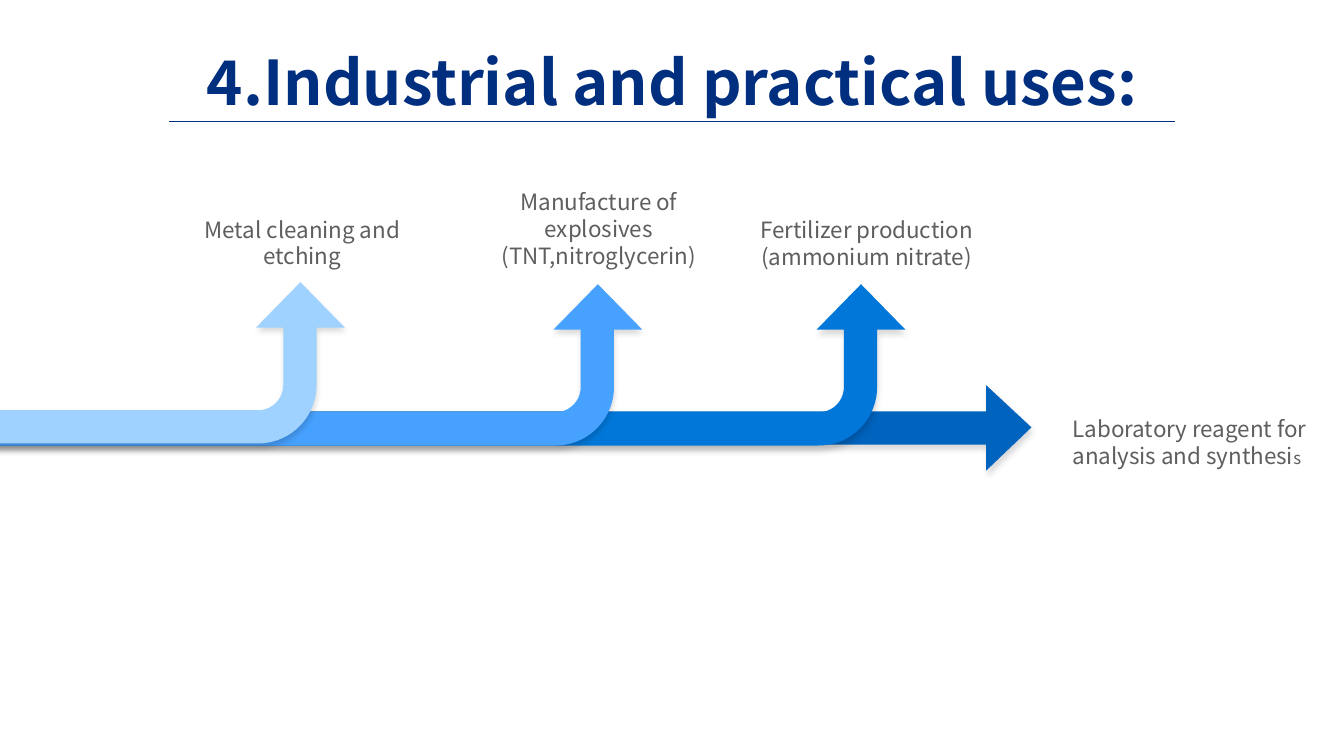
"""Build a slide of branching arrows for industrial and practical uses."""
from math import cos, radians, sin

from lxml.etree import SubElement
from pptx import Presentation
from pptx.dml.color import RGBColor
from pptx.enum.shapes import MSO_CONNECTOR
from pptx.enum.text import MSO_ANCHOR, PP_ALIGN
from pptx.oxml.ns import qn
from pptx.util import Inches, Pt

FONT = "Noto Sans CJK SC"
NAVY = RGBColor(0x00, 0x2F, 0x7F)
GRAY = RGBColor(0x5E, 0x5E, 0x5E)
DEEP_BLUE = RGBColor(0x00, 0x63, 0xBE)
STRONG_BLUE = RGBColor(0x01, 0x78, 0xD9)
BRIGHT_BLUE = RGBColor(0x47, 0xA1, 0xFE)
PALE_BLUE = RGBColor(0x9F, 0xD2, 0xFF)


def add_arrow(page, points, color):
    corners = [(Inches(x), Inches(y)) for x, y in points]
    builder = page.shapes.build_freeform(*corners[0])
    builder.add_line_segments(corners[1:], close=True)
    arrow = builder.convert_to_shape()
    arrow.fill.solid()
    arrow.fill.fore_color.rgb = color
    arrow.line.fill.background()
    arrow.shadow.inherit = False
    effects = arrow._element.spPr.find(qn("a:effectLst"))
    shadow = SubElement(effects, qn("a:outerShdw"), blurRad=str(Pt(4)), dist=str(Pt(3)),
                        dir="5400000", algn="t", rotWithShape="0")
    black = SubElement(shadow, qn("a:srgbClr"), val="000000")
    SubElement(black, qn("a:alpha"), val="15000")


def format_span(span, size, color):
    span.font.name = FONT
    span.font.size = Pt(size)
    span.font.color.rgb = color


deck = Presentation()
deck.slide_width = Inches(13.33)
deck.slide_height = Inches(7.5)
page = deck.slides.add_slide(deck.slide_layouts[5])

rule = page.shapes.add_connector(MSO_CONNECTOR.STRAIGHT, Inches(1.68), Inches(1.2),
                                 Inches(11.65), Inches(1.2))
rule.line.color.rgb = NAVY
rule.line.width = Pt(0.5)
SubElement(rule._element.spPr, qn("a:effectLst"))

title = page.shapes.title
title.left, title.top = Inches(0.92), Inches(0.12)
title.width, title.height = Inches(11.5), Inches(1.45)
title.text_frame.text = "4.Industrial and practical uses:"
title.text_frame.vertical_anchor = MSO_ANCHOR.MIDDLE
heading = title.text_frame.paragraphs[0]
heading.alignment = PP_ALIGN.CENTER
heading.line_spacing = 0.9
format_span(heading.runs[0], 44, NAVY)
heading.runs[0].font.bold = True

add_arrow(page, [(10.23, 4.24), (9.78, 3.82), (9.78, 4.08), (-0.55, 4.08),
                 (-0.59, 4.41), (9.78, 4.41), (9.78, 4.67)], DEEP_BLUE)

branches = [
    (8.54, 2.82, -0.49, STRONG_BLUE),
    (5.93, 2.82, -0.54, BRIGHT_BLUE),
    (2.98, 2.8, -1.68, PALE_BLUE),
]
for tip, top, start, color in branches:
    bend_x, bend_y = tip - 0.42, top + 1.02
    inner, outer = [
        [(bend_x + radius * cos(radians(angle)), bend_y + radius * sin(radians(angle)))
         for angle in range(0, 91, 5)]
        for radius in (0.25, 0.58)
    ]
    head = top + 0.45
    points = [(tip, top), (tip - 0.44, head), (tip - 0.17, head), *inner,
              (start, top + 1.27), (start, top + 1.6), *reversed(outer),
              (tip + 0.16, head), (tip + 0.44, head)]
    add_arrow(page, points, color)

labels = [
    (10.54, 4.07, 2.65, 0.63, PP_ALIGN.LEFT,
     [["Laboratory reagent for"], ["analysis and synthesi", "s"]]),
    (7.07, 2.1, 3.05, 0.63, PP_ALIGN.CENTER,
     [["Fertilizer production"], ["(ammonium nitrate)"]]),
    (4.81, 1.82, 2.26, 0.89, PP_ALIGN.CENTER,
     [["Manufacture of explosives"], ["(TNT,nitroglycerin)"]]),
    (1.87, 2.09, 2.26, 0.89, PP_ALIGN.CENTER,
     [["Metal cleaning and etching"]]),
]
for left, top, width, height, alignment, lines in labels:
    box = page.shapes.add_textbox(Inches(left), Inches(top), Inches(width), Inches(height))
    frame = box.text_frame
    frame.word_wrap = True
    for index, texts in enumerate(lines):
        para = frame.add_paragraph() if index else frame.paragraphs[0]
        para.alignment = alignment
        for text, size in zip(texts, (16, 12)):
            span = para.add_run()
            span.text = text
            format_span(span, size, GRAY)

deck.save("out.pptx")
